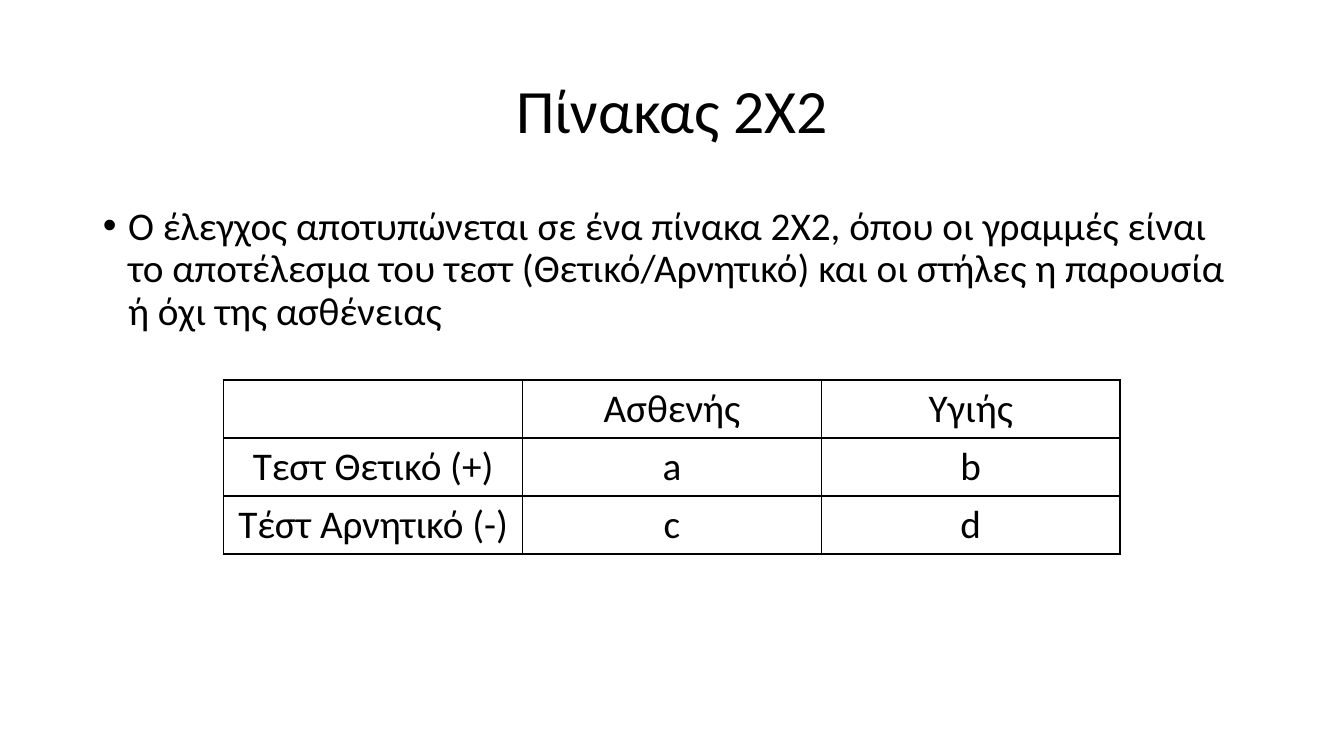
from lxml.etree import SubElement
from pptx import Presentation
from pptx.dml.color import RGBColor
from pptx.enum.text import MSO_ANCHOR, MSO_AUTO_SIZE, PP_ALIGN
from pptx.oxml.ns import qn
from pptx.util import Inches, Pt

BLACK = RGBColor(0, 0, 0)
FONT = "Calibri"


def add_text(paragraph, text, size):
    run = paragraph.add_run()
    run.text = text
    run.font.name = FONT
    run.font.size = Pt(size)
    run.font.color.rgb = BLACK


def add_borders(cell):
    """Draw a 1 pt black line on all four sides of a table cell."""
    properties = cell._tc.get_or_add_tcPr()
    for position, side in enumerate(("lnL", "lnR", "lnT", "lnB")):
        line = properties.makeelement(qn(f"a:{side}"), {"w": str(Pt(1))})
        properties.insert(position, line)
        fill = SubElement(line, qn("a:solidFill"))
        SubElement(fill, qn("a:srgbClr"), val=str(BLACK))


prs = Presentation()
prs.slide_width = Inches(13.33)
prs.slide_height = Inches(7.5)
slide = prs.slides.add_slide(prs.slide_layouts[1])

# Title and explanation
title = slide.shapes.title
explanation = slide.placeholders[1]
for placeholder, top, height in ((title, 0.4, 1.45), (explanation, 2, 4.76)):
    placeholder.left, placeholder.top = Inches(0.92), Inches(top)
    placeholder.width, placeholder.height = Inches(11.5), Inches(height)
    placeholder.text_frame.auto_size = MSO_AUTO_SIZE.NONE
    placeholder.text_frame.paragraphs[0].line_spacing = 0.9

title.text_frame.vertical_anchor = MSO_ANCHOR.MIDDLE
heading = title.text_frame.paragraphs[0]
heading.alignment = PP_ALIGN.CENTER
add_text(heading, "Πίνακας 2Χ2", 44)

bullet = explanation.text_frame.paragraphs[0]
bullet.space_before = Pt(10)
bullet_properties = bullet._p.get_or_add_pPr()
bullet_properties.set("marL", str(Inches(0.25)))
bullet_properties.set("indent", str(-Inches(0.25)))
SubElement(bullet_properties, qn("a:buFont"), typeface="Arial")
SubElement(bullet_properties, qn("a:buChar"), char="•")
add_text(
    bullet,
    "Ο έλεγχος αποτυπώνεται σε ένα πίνακα 2Χ2, όπου οι γραμμές είναι "
    "το αποτέλεσμα του τεστ (Θετικό/Αρνητικό) και οι στήλες η παρουσία "
    "ή όχι της ασθένειας",
    28,
)

# Test result by disease status
outcomes = [
    ["", "Ασθενής", "Υγιής"],
    ["Τεστ Θετικό (+)", "a", "b"],
    ["Τέστ Αρνητικό (-)", "c", "d"],
]
table = slide.shapes.add_table(
    3, 3, Inches(2.22), Inches(3.77), Inches(8.89), Inches(1.7)
).table
table.first_row = False
table.horz_banding = False
for row, labels in enumerate(outcomes):
    for column, label in enumerate(labels):
        cell = table.cell(row, column)
        cell.fill.background()
        add_borders(cell)
        if label:
            paragraph = cell.text_frame.paragraphs[0]
            paragraph.alignment = PP_ALIGN.CENTER
            add_text(paragraph, label, 28)

prs.save("out.pptx")
